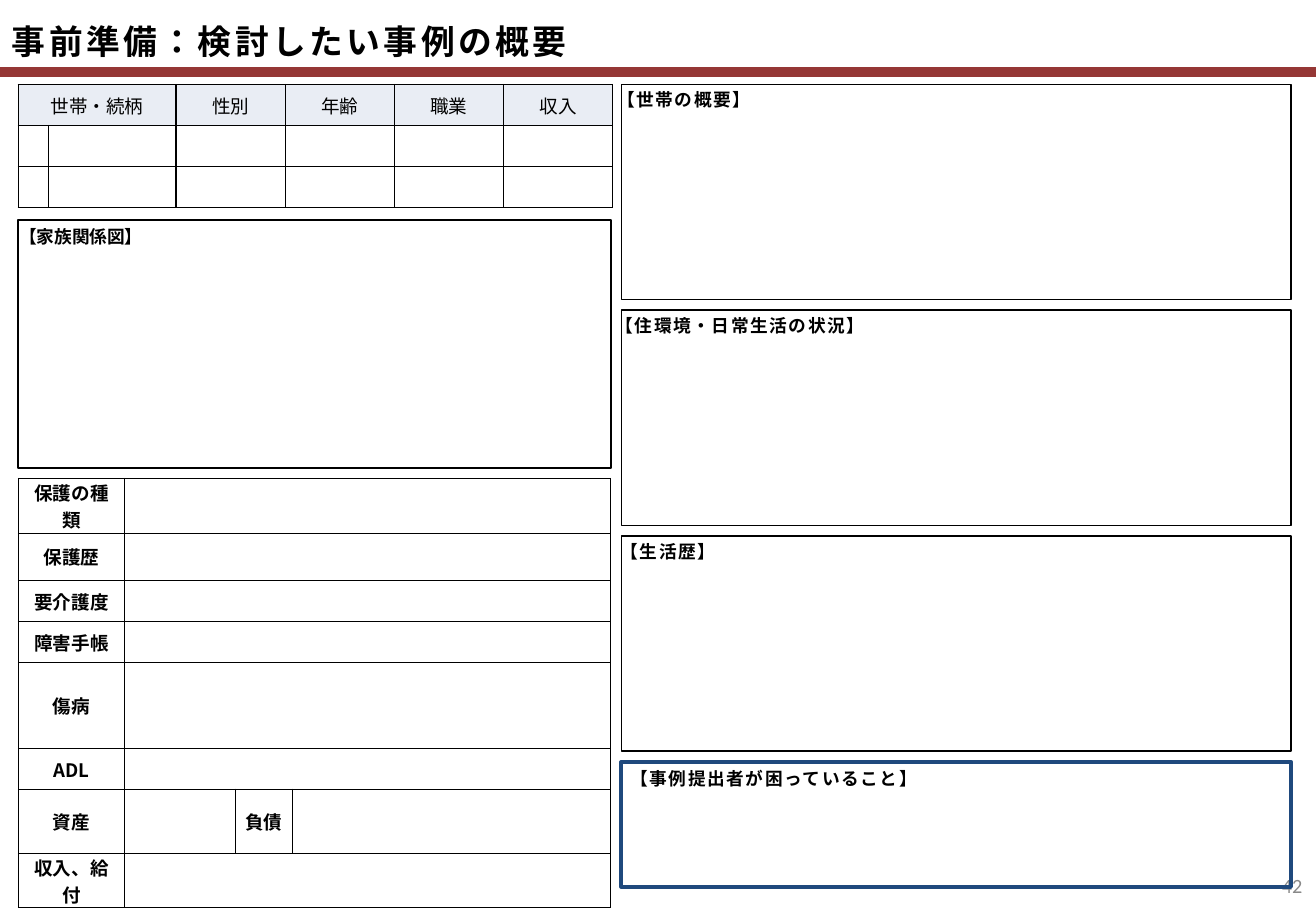
from lxml.etree import SubElement
from pptx import Presentation
from pptx.dml.color import RGBColor
from pptx.enum.lang import MSO_LANGUAGE_ID as LANG
from pptx.enum.shapes import MSO_CONNECTOR, MSO_SHAPE
from pptx.enum.text import MSO_ANCHOR as ANCHOR, PP_ALIGN as ALIGN
from pptx.oxml.ns import qn
from pptx.util import Pt

FONT = "Noto Sans CJK JP"
COLORS = {
    "black": "000000",
    "rule": "953735",
    "header": "E9EDF4",
    "accent": "1F497D",
    "number": "898989",
}


def rgb(name):
    return RGBColor.from_string(COLORS[name])


def style_run(r, size, bold=False, spacing=0, font=FONT, color="black"):
    r.font.size = Pt(size)
    r.font.bold = bold
    r.font.name = font
    r.font.language_id = LANG.JAPANESE
    r.font.color.rgb = rgb(color)
    rPr = r._r.get_or_add_rPr()
    SubElement(rPr, qn("a:ea")).set("typeface", font)
    if spacing:
        rPr.set("spc", str(spacing * 100))


def add_text(s, box, text, size, margins=(0, 0, 0, 0), wrap=False,
             anchor=ANCHOR.TOP, align=ALIGN.LEFT, **style):
    tf = s.shapes.add_textbox(*map(Pt, box)).text_frame
    tf.word_wrap = wrap
    tf.vertical_anchor = anchor
    tf.margin_left, tf.margin_top, tf.margin_right, tf.margin_bottom = map(Pt, margins)
    p = tf.paragraphs[0]
    p.text = text
    p.alignment = align
    style_run(p.runs[0], size, **style)


def add_frame(s, box, color="black", width=1):
    sp = s.shapes.add_shape(MSO_SHAPE.RECTANGLE, *map(Pt, box))
    sp.shadow.inherit = False
    sp.fill.background()
    sp.line.color.rgb = rgb(color)
    sp.line.width = Pt(width)


def add_rule(s, y, width):
    line = s.shapes.add_connector(MSO_CONNECTOR.STRAIGHT, 0, Pt(y), Pt(width), Pt(y))
    line.line.color.rgb = rgb("rule")
    line.line.width = Pt(6)
    SubElement(line._element.spPr, qn("a:effectLst"))


def set_borders(cell, width):
    tcPr = cell._tc.get_or_add_tcPr()
    for i, side in enumerate(("a:lnL", "a:lnR", "a:lnT", "a:lnB")):
        ln = tcPr.makeelement(qn(side), {"w": str(Pt(width))})
        fill = SubElement(ln, qn("a:solidFill"))
        SubElement(fill, qn("a:srgbClr")).set("val", COLORS["black"])
        tcPr.insert(i, ln)


def add_grid(s, left, top, cols, rows, texts, spans, margin, border,
             bold=False, header=False):
    """texts maps (row, column) to wording; spans lists (row, first, last)."""
    frame = s.shapes.add_table(len(rows), len(cols), Pt(left), Pt(top),
                               Pt(sum(cols)), Pt(sum(rows)))
    table = frame.table
    table.first_row = header
    table.horz_banding = False
    for column, width in zip(table.columns, cols):
        column.width = Pt(width)
    for row, height in zip(table.rows, rows):
        row.height = Pt(height)
    for row, first, last in spans:
        table.cell(row, first).merge(table.cell(row, last))
    for i in range(len(rows)):
        for j in range(len(cols)):
            cell = table.cell(i, j)
            cell.margin_left = cell.margin_right = Pt(margin)
            cell.margin_top = cell.margin_bottom = 0
            cell.vertical_anchor = ANCHOR.MIDDLE
            if header and i == 0:
                cell.fill.solid()
                cell.fill.fore_color.rgb = rgb("header")
            else:
                cell.fill.background()
            set_borders(cell, border)
            if (i, j) in texts:
                p = cell.text_frame.paragraphs[0]
                p.text = texts[i, j]
                p.alignment = ALIGN.CENTER
                style_run(p.runs[0], 11, bold)


def main():
    prs = Presentation()
    prs.slide_width, prs.slide_height = Pt(780), Pt(540)
    s = prs.slides.add_slide(prs.slide_layouts[6])

    # Title, rule and page number
    add_rule(s, 42.6, 780)
    add_text(s, (746.6, 510.5, 32.4, 28.8), "42", 12, (7.2, 3.6, 7.2, 3.6), True,
             ANCHOR.MIDDLE, ALIGN.RIGHT, font="Calibri", color="number")
    add_text(s, (0, 0, 759, 42.6), "事前準備：検討したい事例の概要", 20,
             (7.2, 5.8, 7.2, 0), True, ANCHOR.MIDDLE, bold=True, spacing=2)

    # Household members
    heads = ["世帯・続柄", "性別", "年齢", "職業", "収入"]
    columns = [0, 2, 3, 4, 5]
    add_grid(s, 10.8, 50.1, [18, 75.6] + [64.7] * 4, [24.3] * 3,
             {(0, j): head for j, head in zip(columns, heads)},
             [(0, 0, 1)], 5, 1, header=True)

    # Family diagram
    add_frame(s, (10.8, 130.4, 351.4, 146.9))
    add_text(s, (11.5, 133.9, 74.2, 13), "【家族関係図】", 10.5, bold=True)

    # Assistance, health and assets: two-line labels get taller rows
    labels = ["保護の種類", "保護歴", "要介護度", "障害手帳", "傷病", "ADL", "資産", "収入、給付"]
    asset_row = labels.index("資産")
    texts = {(i, 0): label for i, label in enumerate(labels)}
    texts[asset_row, 2] = "負債"
    add_grid(s, 10.8, 283.5, [63.2, 65.6, 33.6, 188.6],
             [32.4, 28, 24.5, 24.5, 51, 23.8, 38, 32.4], texts,
             [(i, 1, 3) for i in range(len(labels)) if i != asset_row],
             4.3, 0.5, bold=True)

    # Household, living conditions and life history
    sections = [("【世帯の概要】", 365.8, 81.4),
                ("【住環境・日常生活の状況】", 365, 151.2),
                ("【生活歴】", 367.9, 58.3)]
    for i, (label, left, width) in enumerate(sections):
        top = 50 + 133.9 * i
        add_frame(s, (368.3, top, 396.9, 127.6))
        add_text(s, (left, top + 2.6, width, 13), label, 10.5, bold=True, spacing=1)

    # Presenter's concerns
    add_frame(s, (368.3, 451.6, 396.9, 74.2), "accent", 2.25)
    add_text(s, (373.7, 455, 174.2, 13), "【事例提出者が困っていること】", 10.5,
             bold=True, spacing=1)

    prs.save("out.pptx")


if __name__ == "__main__":
    main()
